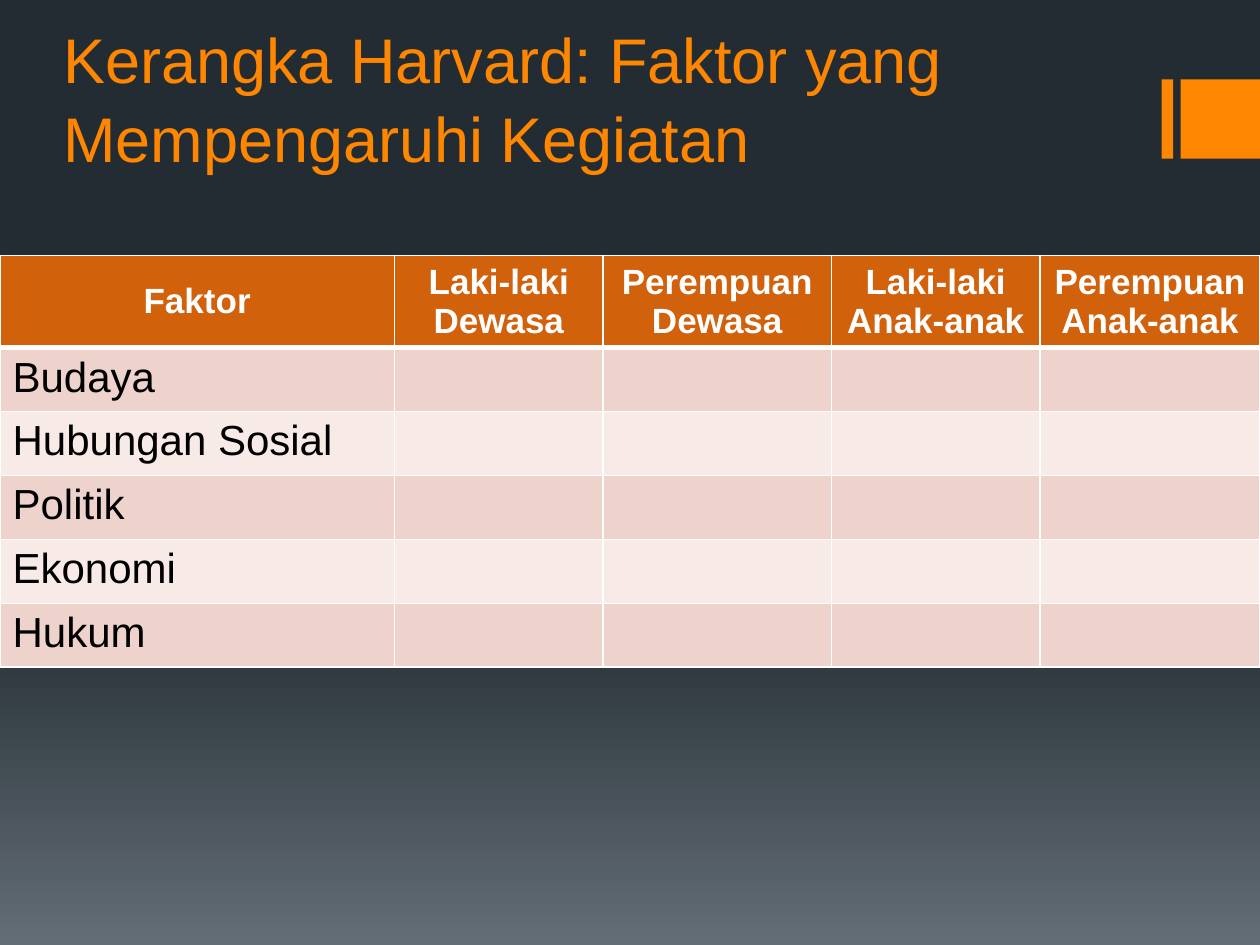
from lxml import etree
from pptx import Presentation
from pptx.dml.color import RGBColor
from pptx.enum.shapes import MSO_SHAPE
from pptx.enum.text import MSO_ANCHOR, MSO_AUTO_SIZE, PP_ALIGN
from pptx.oxml.ns import qn
from pptx.util import Cm, Pt

RECTANGLE = MSO_SHAPE.RECTANGLE
MIDDLE, TOP, BOTTOM = MSO_ANCHOR.MIDDLE, MSO_ANCHOR.TOP, MSO_ANCHOR.BOTTOM
CENTER, LEFT = PP_ALIGN.CENTER, PP_ALIGN.LEFT
NO_AUTOFIT = MSO_AUTO_SIZE.NONE

FONT = "Arial"
ORANGE = RGBColor(0xFF, 0x86, 0x00)
HEADER_FILL = RGBColor(0xD2, 0x61, 0x0C)
BAND_FILLS = (RGBColor(0xEE, 0xD2, 0xCC), RGBColor(0xF7, 0xEA, 0xE7))
WHITE = RGBColor(0xFF, 0xFF, 0xFF)
BLACK = RGBColor(0x00, 0x00, 0x00)
BACKGROUND_STOPS = (
    (0, RGBColor(0x24, 0x2C, 0x33)),
    (65, RGBColor(0x27, 0x30, 0x37)),
    (100, RGBColor(0x63, 0x6D, 0x76)),
)

TITLE = "Kerangka Harvard: Faktor yang Mempengaruhi Kegiatan"
HEADERS = ("Faktor", "Laki-laki Dewasa", "Perempuan Dewasa",
           "Laki-laki Anak-anak", "Perempuan Anak-anak")
FACTORS = ("Budaya", "Hubungan Sosial", "Politik", "Ekonomi", "Hukum")
COLUMN_WIDTHS = (7.95, 4.21, 4.6, 4.21, 4.43)


def add_color(parent, color):
    etree.SubElement(parent, qn("a:srgbClr"), val=str(color))


def paint_background(slide):
    fill = slide.background.fill
    fill.gradient()
    fill.gradient_angle = 270
    stops = slide.element.find(".//" + qn("a:gsLst"))
    for stop in list(stops):
        stops.remove(stop)
    for position, color in BACKGROUND_STOPS:
        add_color(etree.SubElement(stops, qn("a:gs"), pos=str(position * 1000)), color)


def add_run(paragraph, text, size, color, bold=False):
    run = paragraph.add_run()
    run.text = text
    run.font.name = FONT
    run.font.size = Pt(size)
    run.font.bold = bold
    run.font.color.rgb = color


def add_accent(slide, left, top, width, height):
    bar_width = Cm(0.23)
    block_left = Cm(0.38)
    for offset, part_width in ((0, bar_width), (block_left, width - block_left)):
        shape = slide.shapes.add_shape(RECTANGLE, left + offset, top, part_width, height)
        shape.shadow.inherit = False
        shape.fill.solid()
        shape.fill.fore_color.rgb = ORANGE
        shape.line.fill.background()


def place_title(slide, left, top, width, height):
    title = slide.shapes.title
    title.left, title.top, title.width, title.height = left, top, width, height
    frame = title.text_frame
    frame.word_wrap = True
    frame.auto_size = NO_AUTOFIT
    frame.vertical_anchor = BOTTOM
    paragraph = frame.paragraphs[0]
    paragraph.alignment = LEFT
    paragraph.line_spacing = 1.05
    add_run(paragraph, TITLE, 36, ORANGE)


def set_borders(cell, bottom_width=1, top_width=1):
    properties = cell._tc.get_or_add_tcPr()
    sides = (("a:lnL", 1), ("a:lnR", 1), ("a:lnT", top_width), ("a:lnB", bottom_width))
    for index, (tag, width) in enumerate(sides):
        line = etree.Element(qn(tag), w=str(Pt(width)))
        add_color(etree.SubElement(line, qn("a:solidFill")), WHITE)
        properties.insert(index, line)


def fill_cell(cell, text, fill, size, color, bold, alignment, anchor):
    cell.fill.solid()
    cell.fill.fore_color.rgb = fill
    cell.vertical_anchor = anchor
    paragraph = cell.text_frame.paragraphs[0]
    paragraph.alignment = alignment
    paragraph.font.size = Pt(size)
    if text:
        add_run(paragraph, text, size, color, bold)


def add_factor_table(slide, left, top, width, height):
    row_count = len(FACTORS) + 1
    frame = slide.shapes.add_table(row_count, len(HEADERS), left, top, width, height)
    table = frame.table
    for column, column_width in zip(table.columns, COLUMN_WIDTHS):
        column.width = Cm(column_width)
    header_height = Cm(1.86)
    table.rows[0].height = header_height
    for column, header in enumerate(HEADERS):
        cell = table.cell(0, column)
        fill_cell(cell, header, HEADER_FILL, 20, WHITE, True, CENTER, MIDDLE)
        set_borders(cell, bottom_width=3)
    for row, factor in enumerate(FACTORS, start=1):
        table.rows[row].height = (height - header_height) // len(FACTORS)
        for column in range(len(HEADERS)):
            cell = table.cell(row, column)
            text = factor if column == 0 else ""
            fill = BAND_FILLS[(row - 1) % 2]
            fill_cell(cell, text, fill, 24, BLACK, False, LEFT, TOP)
            set_borders(cell, top_width=3 if row == 1 else 1)


def main():
    presentation = Presentation()
    presentation.slide_width = Cm(25.4)
    presentation.slide_height = Cm(19.05)
    slide = presentation.slides.add_slide(presentation.slide_layouts[5])
    paint_background(slide)
    add_accent(slide, Cm(23.42), Cm(1.6), Cm(1.98), Cm(1.6))
    place_title(slide, Cm(1.02), Cm(0.46), Cm(22.1), Cm(3.2))
    add_factor_table(slide, Cm(0), Cm(5.15), Cm(25.4), Cm(7.82))
    presentation.save("out.pptx")


if __name__ == "__main__":
    main()
